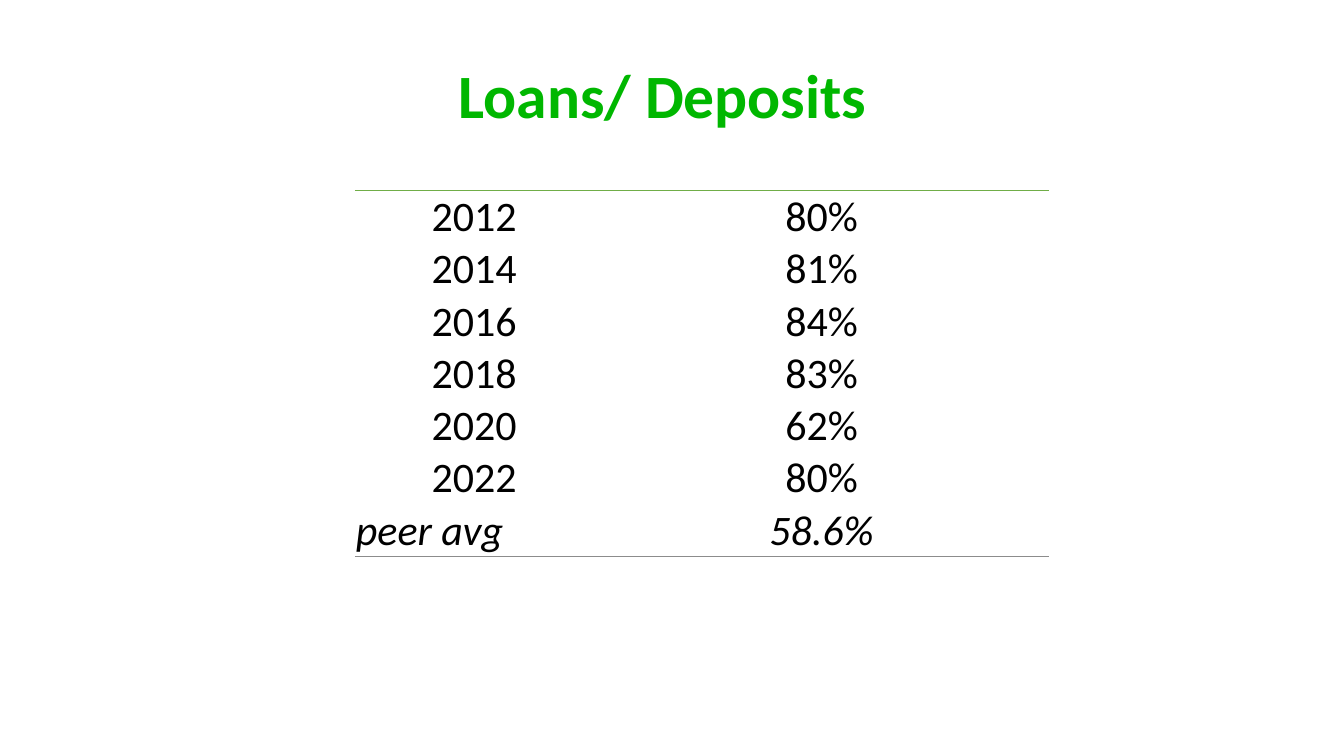
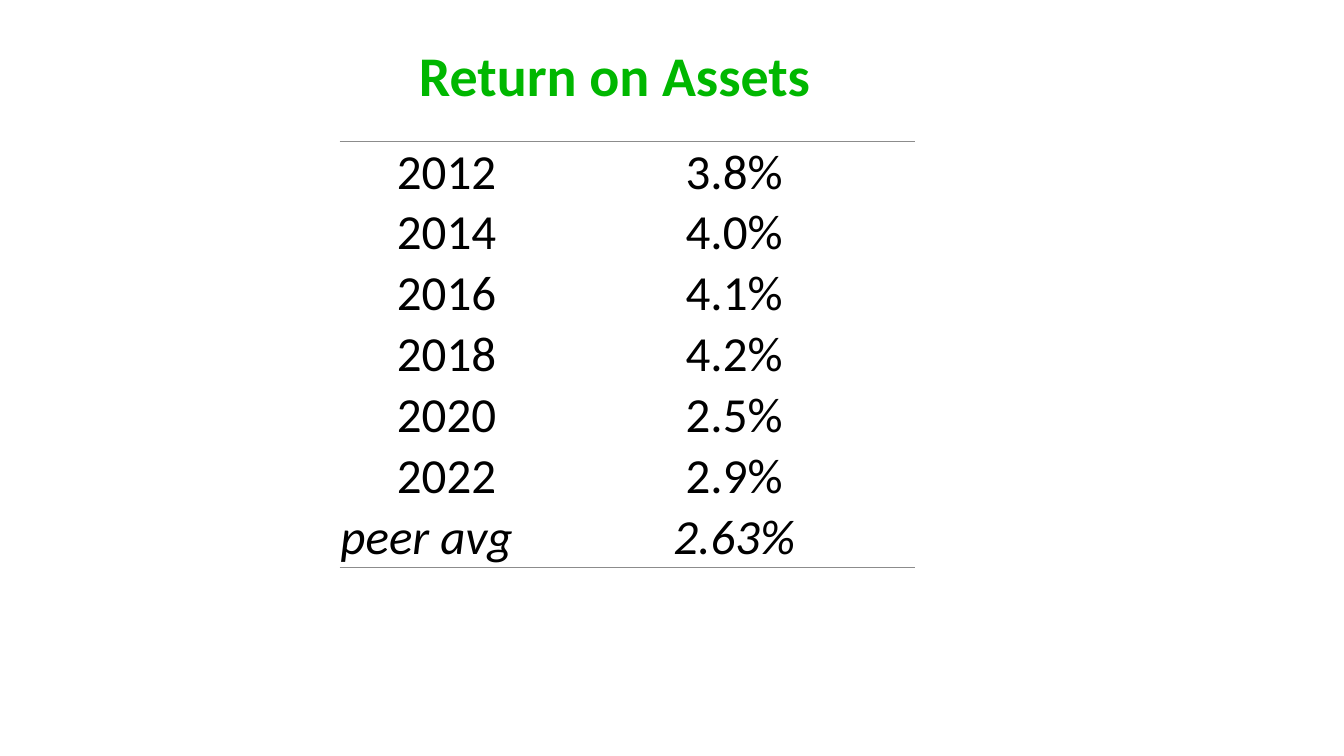
from lxml import etree
from pptx import Presentation
from pptx.dml.color import RGBColor
from pptx.enum import text
from pptx.oxml import ns
from pptx.util import Pt

FONT = "Calibri"
TITLE_GREEN = RGBColor(0x00, 0xB7, 0x00)
RULE_GREEN = RGBColor(0x70, 0xAD, 0x47)
RULE_GREY = RGBColor(0x8C, 0x8C, 0x8C)
BLACK = RGBColor(0, 0, 0)
PLAIN_TABLE = "{2D5ABB26-0587-4C30-8999-92F81FD0307C}"
YEARS = ["2012", "2014", "2016", "2018", "2020", "2022"]
PEER = "peer avg"
TITLE_ONLY = 5
ROW_PER_SIZE = 1.24
LEFT, CENTER = text.PP_ALIGN.LEFT, text.PP_ALIGN.CENTER
MIDDLE, BOTTOM = text.MSO_ANCHOR.MIDDLE, text.MSO_ANCHOR.BOTTOM


def write(paragraph, words, size, color, align, bold=False, italic=False):
    paragraph.alignment = align
    run = paragraph.add_run()
    run.text = words
    font = run.font
    font.name, font.size, font.color.rgb = FONT, Pt(size), color
    font.bold, font.italic = bold, italic


def add_title(slide, words, box, size, align):
    title = slide.shapes.title
    title.left, title.top, title.width, title.height = map(Pt, box)
    frame = title.text_frame
    frame.auto_size = text.MSO_AUTO_SIZE.NONE
    frame.word_wrap = True
    frame.vertical_anchor = MIDDLE
    heading = frame.paragraphs[0]
    heading.line_spacing = 0.9
    write(heading, words, size, TITLE_GREEN, align, bold=True)


def draw_rule(cell, side, color, width):
    line = etree.SubElement(cell._tc.get_or_add_tcPr(), ns.qn(f"a:{side}"), w=str(Pt(width)))
    fill = etree.SubElement(line, ns.qn("a:solidFill"))
    etree.SubElement(fill, ns.qn("a:srgbClr"), val=str(color))


def fill_cell(cell, words, size, align, is_peer):
    cell.margin_left = cell.margin_right = cell.margin_top = Pt(0.72)
    cell.margin_bottom = 0
    cell.vertical_anchor = BOTTOM if is_peer else MIDDLE
    cell.fill.background()
    write(cell.text_frame.paragraphs[0], words, size, BLACK, align, italic=is_peer)


def add_ratios(slide, values, corner, widths, size, top_rule):
    ratios = list(zip(YEARS + [PEER], values))
    row_height = size * ROW_PER_SIZE
    frame = slide.shapes.add_table(len(ratios), len(widths), *map(Pt, corner),
                                   Pt(sum(widths)), Pt(row_height * len(ratios)))
    table = frame.table
    table.first_row = table.horz_banding = False
    table._tbl.tblPr.find(ns.qn("a:tableStyleId")).text = PLAIN_TABLE
    for column, width in zip(table.columns, widths):
        column.width = Pt(width)
    for index, ratio in enumerate(ratios):
        table.rows[index].height = Pt(row_height)
        is_peer = ratio[0] == PEER
        for cell, words in zip(table.rows[index].cells, ratio):
            if index == 0:
                draw_rule(cell, "lnT", *top_rule)
            if is_peer:
                draw_rule(cell, "lnB", RULE_GREY, 0.5)
            fill_cell(cell, words, size, LEFT if words == PEER else CENTER, is_peer)


def main():
    deck = Presentation()
    deck.slide_width, deck.slide_height = Pt(960), Pt(540)
    layout = deck.slide_layouts[TITLE_ONLY]

    loans = deck.slides.add_slide(layout)
    add_title(loans, "Loans/ Deposits", (320.4, 18, 362, 104.4), 44, LEFT)
    add_ratios(loans, ["80%", "81%", "84%", "83%", "62%", "80%", "58.6%"],
               (253.5, 136), (170.6, 325.5), 30, (RULE_GREEN, 1))

    returns = deck.slides.add_slide(layout)
    add_title(returns, "Return on Assets", (267, 21, 344, 70.5), 40, CENTER)
    add_ratios(returns, ["3.8%", "4.0%", "4.1%", "4.2%", "2.5%", "2.9%", "2.63%"],
               (242.5, 101), (153, 258), 35, (RULE_GREY, 0.5))

    for slide in deck.slides:
        for holder in list(slide.placeholders):
            if not holder.text_frame.text:
                holder.element.getparent().remove(holder.element)
    deck.save("out.pptx")


if __name__ == "__main__":
    main()
